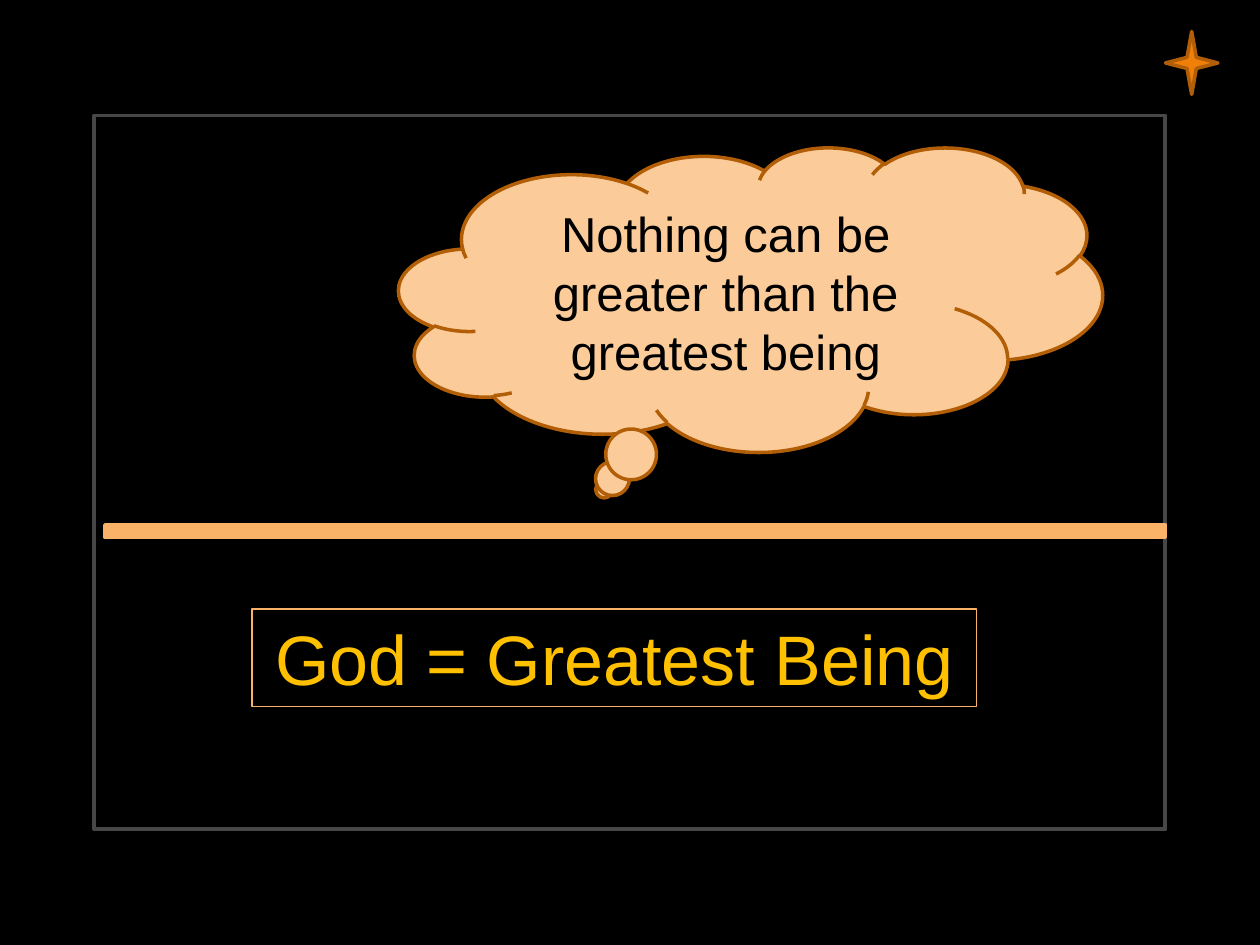
from pptx import Presentation
from pptx.dml.color import RGBColor
from pptx.enum.shapes import MSO_SHAPE
from pptx.enum.text import MSO_ANCHOR, PP_ALIGN
from pptx.util import Pt

RECTANGLE = MSO_SHAPE.RECTANGLE
CLOUD = MSO_SHAPE.CLOUD_CALLOUT
STAR = MSO_SHAPE.STAR_4_POINT
CENTER = PP_ALIGN.CENTER
MIDDLE = MSO_ANCHOR.MIDDLE
TOP = MSO_ANCHOR.TOP
TITLE_ONLY = 5

COLORS = {
    "black": "000000",
    "frame": "474747",
    "bar": "F9B268",
    "cloud": "FBCC9A",
    "edge": "B25E07",
    "star": "F07F09",
    "gold": "FFC000",
}
THOUGHT = "Nothing can be greater than the greatest being"
DEFINITION = "God = Greatest Being"

FRAME = {"bounds": (54, 66, 612, 408), "line": "frame", "weight": 2.25}
BAR = {"bounds": (60, 300, 606, 7.2), "fill": "bar", "line": "bar", "weight": 2}
BUBBLE = {"bounds": (228, 84, 402, 174), "fill": "cloud", "line": "edge", "weight": 2}
SPARK = {"bounds": (666, 18, 30, 36), "fill": "star", "line": "edge", "weight": 2}
DEFINITION_BOUNDS = (144, 348, 414, 55.75)


def color(name):
    return RGBColor.from_string(COLORS[name])


def paint(shape, line, weight, fill=None):
    if fill:
        shape.fill.solid()
        shape.fill.fore_color.rgb = color(fill)
    else:
        shape.fill.background()
    shape.line.color.rgb = color(line)
    shape.line.width = Pt(weight)


def add_box(slide, kind, bounds, **style):
    box = slide.shapes.add_shape(kind, *map(Pt, bounds))
    box.shadow.inherit = False
    paint(box, **style)
    return box


def write(shape, text, size, ink, anchor=MIDDLE):
    frame = shape.text_frame
    frame.word_wrap = True
    frame.vertical_anchor = anchor
    para = frame.paragraphs[0]
    para.alignment = CENTER
    span = para.add_run()
    span.text = text
    span.font.name = "Arial"
    span.font.size = Pt(size)
    span.font.color.rgb = color(ink)


def main():
    deck = Presentation()
    deck.slide_width, deck.slide_height = Pt(720), Pt(540)
    slide = deck.slides.add_slide(deck.slide_layouts[TITLE_ONLY])
    slide.background.fill.solid()
    slide.background.fill.fore_color.rgb = color("black")

    title = slide.shapes.title
    title.left, title.top, title.width, title.height = map(Pt, DEFINITION_BOUNDS)
    paint(title, line="bar", weight=0.75)
    write(title, DEFINITION, size=40, ink="gold", anchor=TOP)

    add_box(slide, RECTANGLE, **FRAME)
    add_box(slide, RECTANGLE, **BAR)
    bubble = add_box(slide, CLOUD, **BUBBLE)
    write(bubble, THOUGHT, size=28, ink="black")
    add_box(slide, STAR, **SPARK)

    deck.save("out.pptx")


if __name__ == "__main__":
    main()
